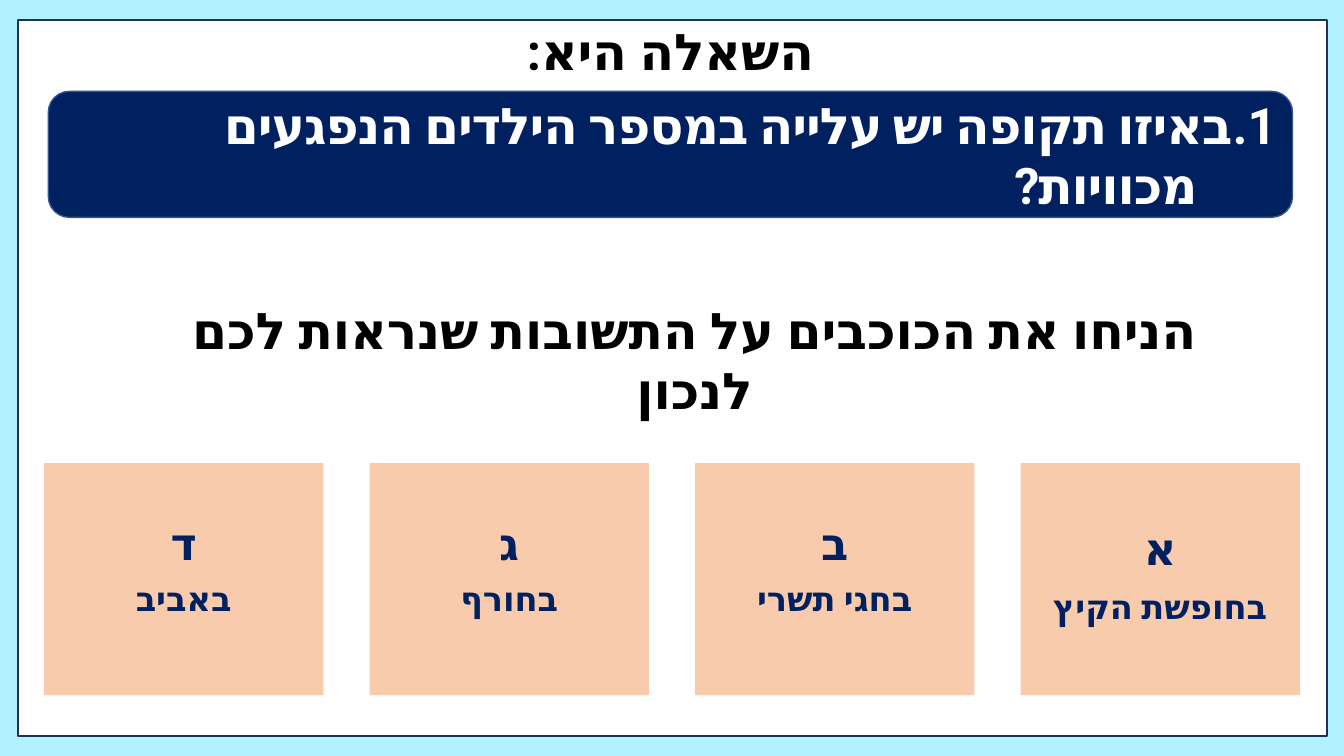
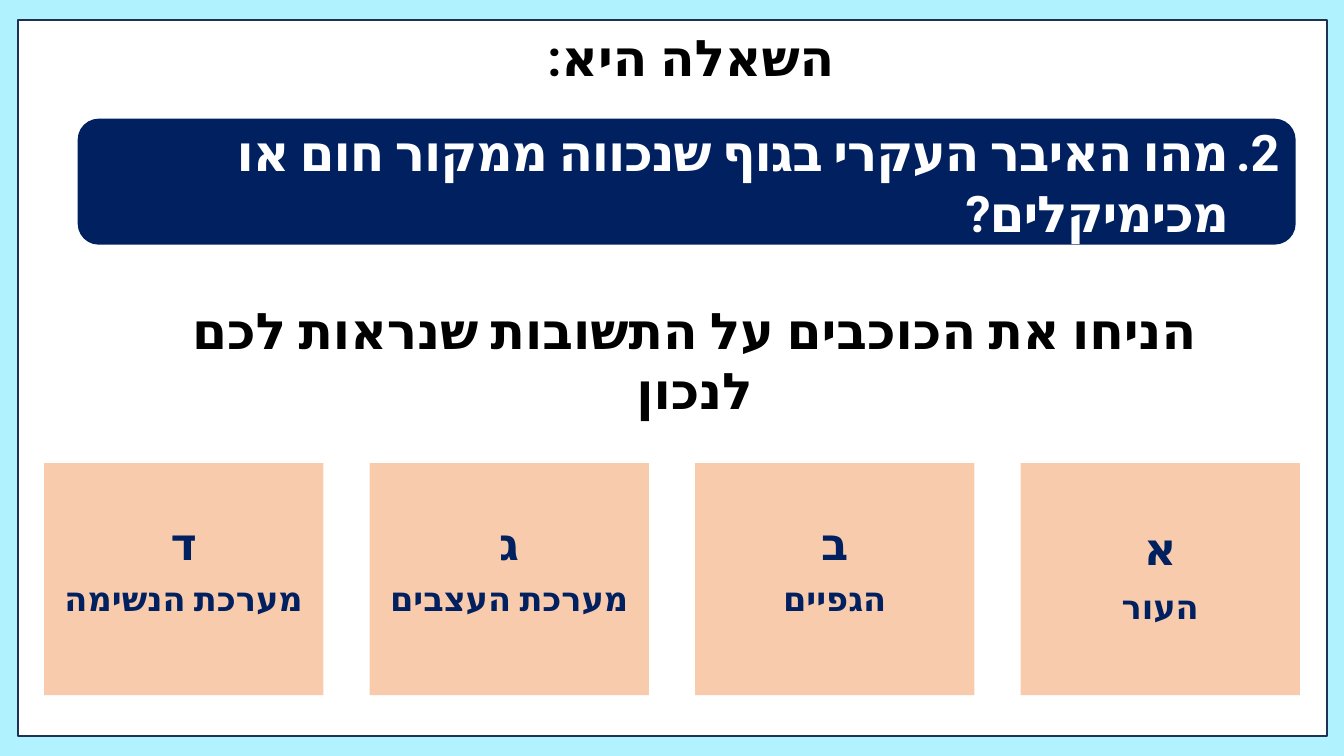
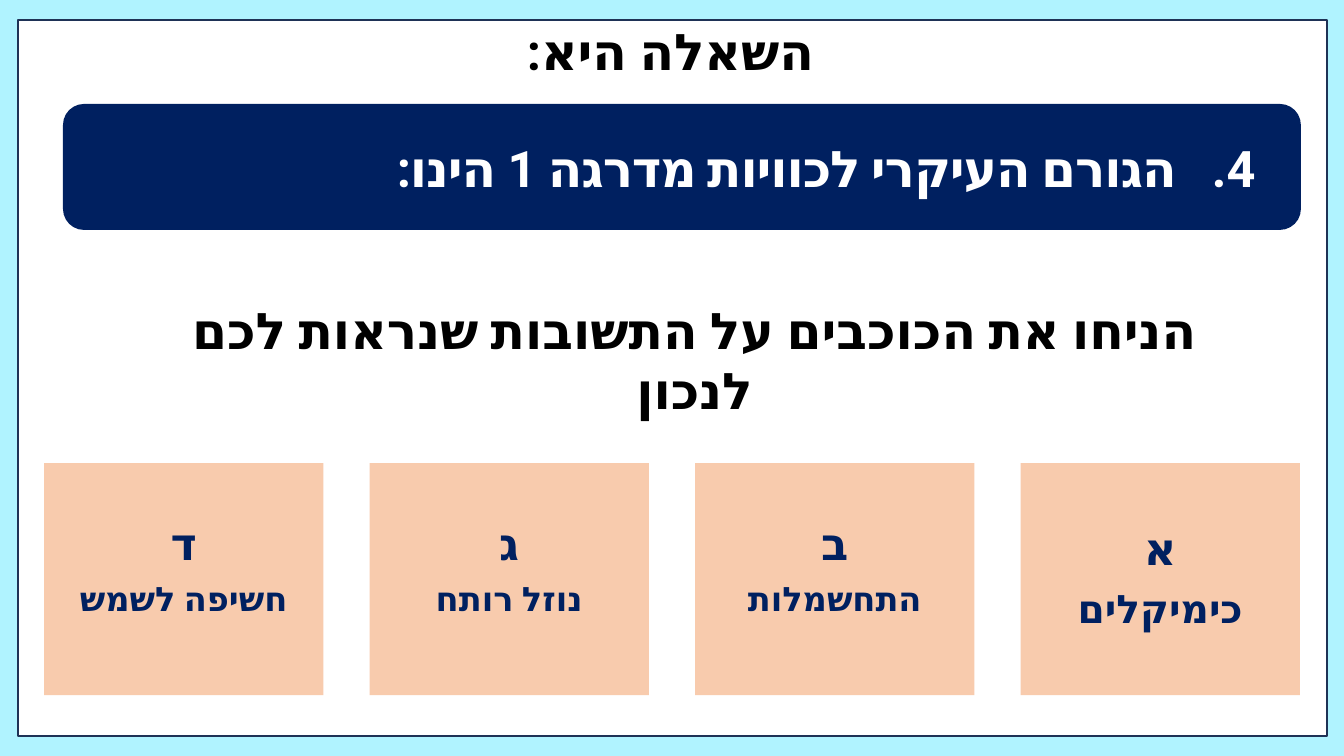
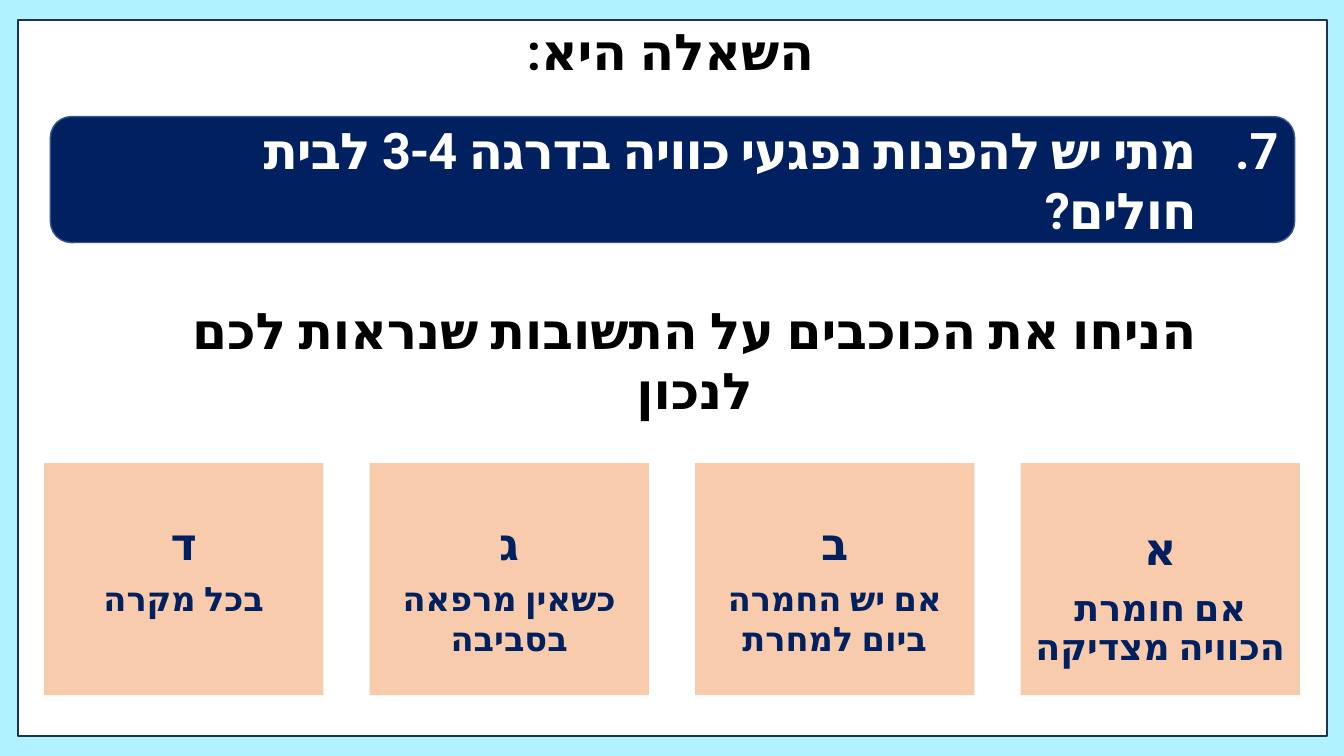
"""Build four Hebrew quiz slides about burns, each with a question and four answer cards."""
import pptx
import pptx.dml.color
import pptx.enum.shapes
import pptx.enum.text
import pptx.oxml.ns
import pptx.util

PX = 9525
WIDTH, HEIGHT = 1280, 720
NAVY, WHITE, BLACK = "002060", "FFFFFF", "000000"
PEACH, SKY, FRAME, EDGE = "F8CBAD", "87EEFF", "1E3256", "325491"
CARD_RIGHT, CARD_TOP, CARD_W, CARD_H, CARD_STEP = 972, 441, 266, 221, 310
LETTERS = "אבגד"
RECT = pptx.enum.shapes.MSO_SHAPE.RECTANGLE
ROUND = pptx.enum.shapes.MSO_SHAPE.ROUNDED_RECTANGLE
MIDDLE = pptx.enum.text.MSO_ANCHOR.MIDDLE
TOP = pptx.enum.text.MSO_ANCHOR.TOP
CENTER = pptx.enum.text.PP_ALIGN.CENTER
RIGHT = pptx.enum.text.PP_ALIGN.RIGHT
rgb = pptx.dml.color.RGBColor.from_string
qn = pptx.oxml.ns.qn

SLIDES = [
    dict(title=(55, 18, 1167), bar=(46, 87, 1185), edge=EDGE, number=1,
         lines=[("באיזו תקופה יש עלייה במספר הילדים הנפגעים", 30, -78),
                ("מכוויות?", 75, 0)],
         answers=["בחופשת הקיץ", "בחגי תשרי", "בחורף", "באביב"], first_size=24),
    dict(title=(78, 23, 1160), bar=(74, 113, 1160), edge=None, number=2,
         lines=[("מהו האיבר העקרי בגוף שנכווה ממקור חום או מכימיקלים?", 48, -48)],
         answers=["העור", "הגפיים", "מערכת העצבים", "מערכת הנשימה"], first_size=24),
    dict(title=(55, 18, 1167), bar=(60, 99, 1179), edge=None, number=4,
         lines=[("הגורם העיקרי לכוויות מדרגה 1 הינו:", 103, -75)],
         answers=["כימיקלים", "התחשמלות", "נוזל רותח", "חשיפה לשמש"], first_size=28),
    dict(title=(55, 18, 1167), bar=(48, 111, 1185), edge=EDGE, number=7,
         lines=[("מתי יש להפנות נפגעי כוויה בדרגה 3-4 לבית חולים?", 78, -78)],
         answers=["אם חומרת הכוויה מצדיקה", "אם יש החמרה ביום למחרת",
                  "כשאין מרפאה בסביבה", "בכל מקרה"], first_size=26),
]


def box(s, x, y, w, h, kind=None, fill=None, line=None, anchor=TOP):
    """Add a shape, or a text box when no kind is given."""
    at = [v * PX for v in (x, y, w, h)]
    if kind is None:
        sp = s.shapes.add_textbox(*at)
    else:
        sp = s.shapes.add_shape(kind, *at)
        sp.shadow.inherit = False
        sp.fill.solid()
        sp.fill.fore_color.rgb = rgb(fill)
        if line:
            sp.line.color.rgb = rgb(line)
            sp.line.width = pptx.util.Pt(1)
        else:
            sp.line.fill.background()
    sp.text_frame.word_wrap = True
    sp.text_frame.vertical_anchor = anchor
    return sp


def para(tf, text, size, color, font="Arial", align=CENTER, spacing=None, before=0):
    """Add one bold right-to-left paragraph and return it."""
    p = tf.paragraphs[0] if not tf.text else tf.add_paragraph()
    p.alignment = align
    p.line_spacing = spacing
    p.space_before = pptx.util.Pt(before)
    p._p.get_or_add_pPr().set("rtl", "1")
    r = p.add_run()
    r.text = text
    r.font.size = pptx.util.Pt(size)
    r.font.bold = True
    r.font.color.rgb = rgb(color)
    r.font.name = font
    rPr = r._r.get_or_add_rPr()
    rPr.set("lang", "he-IL")
    rPr.append(rPr.makeelement(qn("a:cs"), {"typeface": "Roboto"}))
    return p


prs = pptx.Presentation()
prs.slide_width = WIDTH * PX
prs.slide_height = HEIGHT * PX

for quiz in SLIDES:
    s = prs.slides.add_slide(prs.slide_layouts[6])

    backdrop = box(s, 0, -2, WIDTH, HEIGHT + 2, RECT, SKY)
    clr = backdrop._element.spPr.find(qn("a:solidFill")).find(qn("a:srgbClr"))
    clr.append(clr.makeelement(qn("a:alpha"), {"val": "65000"}))
    box(s, 17, 19, 1247, 682, RECT, WHITE, FRAME)

    title = box(s, *quiz["title"], 68, anchor=MIDDLE)
    para(title.text_frame, "השאלה היא:", 36, BLACK, spacing=0.9)

    bar = box(s, *quiz["bar"], 120, ROUND, NAVY, quiz["edge"], MIDDLE)
    bar.text_frame.margin_left = 60 * PX
    for i, (text, margin, indent) in enumerate(quiz["lines"]):
        p = para(bar.text_frame, text, 36, WHITE, "Roboto", RIGHT)
        p.runs[0]._r.get_or_add_rPr().set("spc", "-80")
        pPr = p._p.get_or_add_pPr()
        pPr.set("marL", str(margin * PX))
        pPr.set("indent", str(indent * PX))
        if i == 0:
            pPr.append(pPr.makeelement(qn("a:buFont"), {"typeface": "Roboto"}))
            pPr.append(pPr.makeelement(qn("a:buAutoNum"), {
                "type": "arabicPeriod", "startAt": str(quiz["number"])}))

    for i, (letter, answer) in enumerate(zip(LETTERS, quiz["answers"])):
        card = box(s, CARD_RIGHT - i * CARD_STEP, CARD_TOP, CARD_W, CARD_H, RECT, PEACH)
        tf = card.text_frame
        first = i == 0
        tf.margin_top = (55 if first else 50) * PX
        para(tf, letter, 32, NAVY)
        para(tf, answer, quiz["first_size"] if first else 24, NAVY,
             spacing=0.9 if first else None, before=11 if first else 6)

    hint = box(s, 117, 280, 1089, 68)
    hint.text_frame.margin_left = hint.text_frame.margin_right = 20 * PX
    para(hint.text_frame, "הניחו את הכוכבים על התשובות שנראות לכם לנכון", 36, BLACK)

prs.save("out.pptx")
